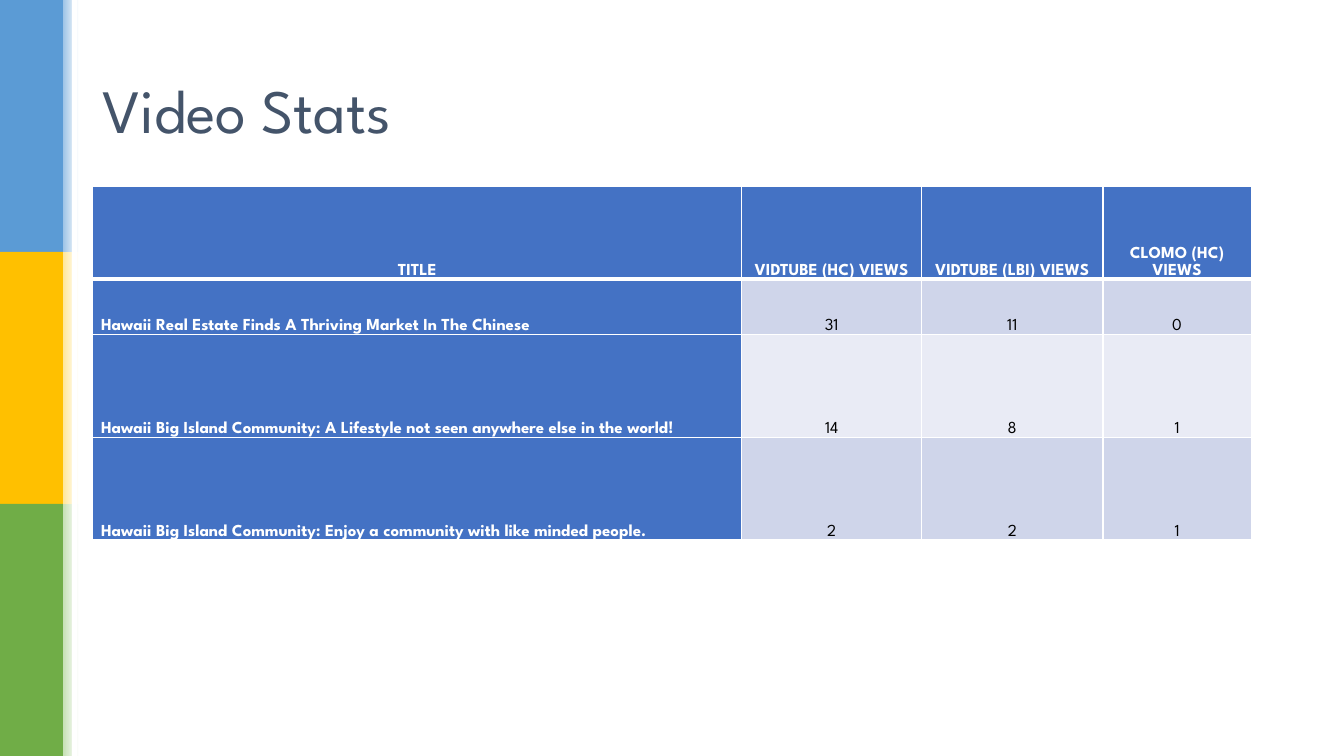
"""Build the Video Stats slide."""
from dataclasses import dataclass

from lxml import etree
from pptx import Presentation, util as u
from pptx.dml import color
from pptx.enum import shapes, text
from pptx.oxml import ns


@dataclass(frozen=True)
class Theme:
    """Colours, font and type sizes of the slide."""
    font: str = "League Spartan"
    title_size: int = 44
    table_size: int = 12
    title: str = "44546A"
    white: str = "FFFFFF"
    black: str = "000000"
    heading: str = "4472C4"
    bands: tuple = ("CFD5EA", "E9EBF5")
    sidebar: tuple = (("5B9BD5", "9DC3E6"), ("FFC000", "FFE699"), ("70AD47", "C5E0B4"))


THEME = Theme()
COLUMN_WIDTHS = (463.7, 128.4, 129.6, 105.8)
ROW_HEIGHTS = (66.2, 39.6, 73.4, 73.4)
STATS = (
    ("TITLE", "VIDTUBE (HC) VIEWS", "VIDTUBE (LBI) VIEWS", "CLOMO (HC) VIEWS"),
    ("Hawaii Real Estate Finds A Thriving Market In The Chinese", "31", "11", "0"),
    ("Hawaii Big Island Community: A Lifestyle not seen anywhere else in the world!",
     "14", "8", "1"),
    ("Hawaii Big Island Community: Enjoy a community with like minded people.",
     "2", "2", "1"),
)


def rgb(value):
    """Turn a hex string into a colour."""
    return color.RGBColor.from_string(value)


def apply(target, values):
    """Set each named attribute of the target."""
    for name, value in values.items():
        setattr(target, name, value)


def write(frame, words, size, hue, bold=False, **layout):
    """Put one formatted paragraph into a text frame."""
    paragraph = frame.paragraphs[0]
    apply(paragraph, layout)
    run = paragraph.add_run()
    run.text = words
    apply(run.font, {"name": THEME.font, "size": u.Pt(size), "bold": bold})
    run.font.color.rgb = rgb(hue)


def add_bar(slide, box, *hues):
    """Add a borderless bar, fading sideways when two colours are given."""
    bar = slide.shapes.add_shape(shapes.MSO_SHAPE.RECTANGLE, *map(u.Pt, box))
    bar.shadow.inherit = False
    bar.line.fill.background()
    if len(hues) == 1:
        bar.fill.solid()
        bar.fill.fore_color.rgb = rgb(hues[0])
        return
    bar.fill.gradient()
    bar.fill.gradient_angle = 0
    for stop, hue in zip(bar.fill.gradient_stops, hues):
        stop.color.rgb = rgb(hue)


def add_sidebar(slide):
    """Add the three coloured bands with their fading edges."""
    height = 540 / len(THEME.sidebar)
    for index, (band, edge) in enumerate(THEME.sidebar):
        add_bar(slide, (0, index * height, 45, height), band)
        add_bar(slide, (45, index * height, 11.5, height), edge, THEME.white)
    add_bar(slide, (51.4, 0, 3.6, 540), THEME.white)


def add_title(slide, words):
    """Add the slide title."""
    frame = slide.shapes.add_textbox(*map(u.Pt, (66, 28.8, 828, 104.4))).text_frame
    apply(frame, {"word_wrap": True, "vertical_anchor": text.MSO_ANCHOR.MIDDLE})
    write(frame, words, THEME.title_size, THEME.title, line_spacing=0.9)


def set_borders(cell, widths):
    """Draw white cell borders with the given width for each side."""
    properties = cell._tc.get_or_add_tcPr()
    for index, (side, width) in enumerate(widths.items()):
        line = etree.Element(ns.qn(f"a:ln{side}"), w=str(u.Pt(width)))
        fill = etree.SubElement(line, ns.qn("a:solidFill"))
        etree.SubElement(fill, ns.qn("a:srgbClr"), val=THEME.white)
        properties.insert(index, line)


def fill_cell(cell, words, row, column):
    """Style one cell by its place in the table and write its text."""
    heading = row == 0 or column == 0
    apply(cell, {"margin_left": u.Pt(6), "margin_right": u.Pt(6),
                 "margin_top": 0, "margin_bottom": 0,
                 "vertical_anchor": text.MSO_ANCHOR.BOTTOM})
    cell.fill.solid()
    cell.fill.fore_color.rgb = rgb(THEME.heading if heading else THEME.bands[(row - 1) % 2])
    set_borders(cell, {"L": 1, "R": 1, "T": 3 if row == 1 else 1, "B": 3 if row == 0 else 1})
    left = row > 0 and column == 0
    write(cell.text_frame, words, THEME.table_size,
          THEME.white if heading else THEME.black, heading, line_spacing=1.07,
          alignment=text.PP_ALIGN.LEFT if left else text.PP_ALIGN.CENTER)


def add_stats(slide):
    """Add the table of views for each video."""
    box = (66.2, 133.2, sum(COLUMN_WIDTHS), sum(ROW_HEIGHTS))
    table = slide.shapes.add_table(len(STATS), len(STATS[0]), *map(u.Pt, box)).table
    for column, width in zip(table.columns, COLUMN_WIDTHS):
        column.width = u.Pt(width)
    for row, height in zip(table.rows, ROW_HEIGHTS):
        row.height = u.Pt(height)
    for row, entries in enumerate(STATS):
        for column, words in enumerate(entries):
            fill_cell(table.cell(row, column), words, row, column)


def main():
    """Build and save the slide."""
    deck = Presentation()
    apply(deck, {"slide_width": u.Pt(960), "slide_height": u.Pt(540)})
    slide = deck.slides.add_slide(deck.slide_layouts[6])
    add_sidebar(slide)
    add_title(slide, "Video Stats")
    add_stats(slide)
    deck.save("out.pptx")


if __name__ == "__main__":
    main()
